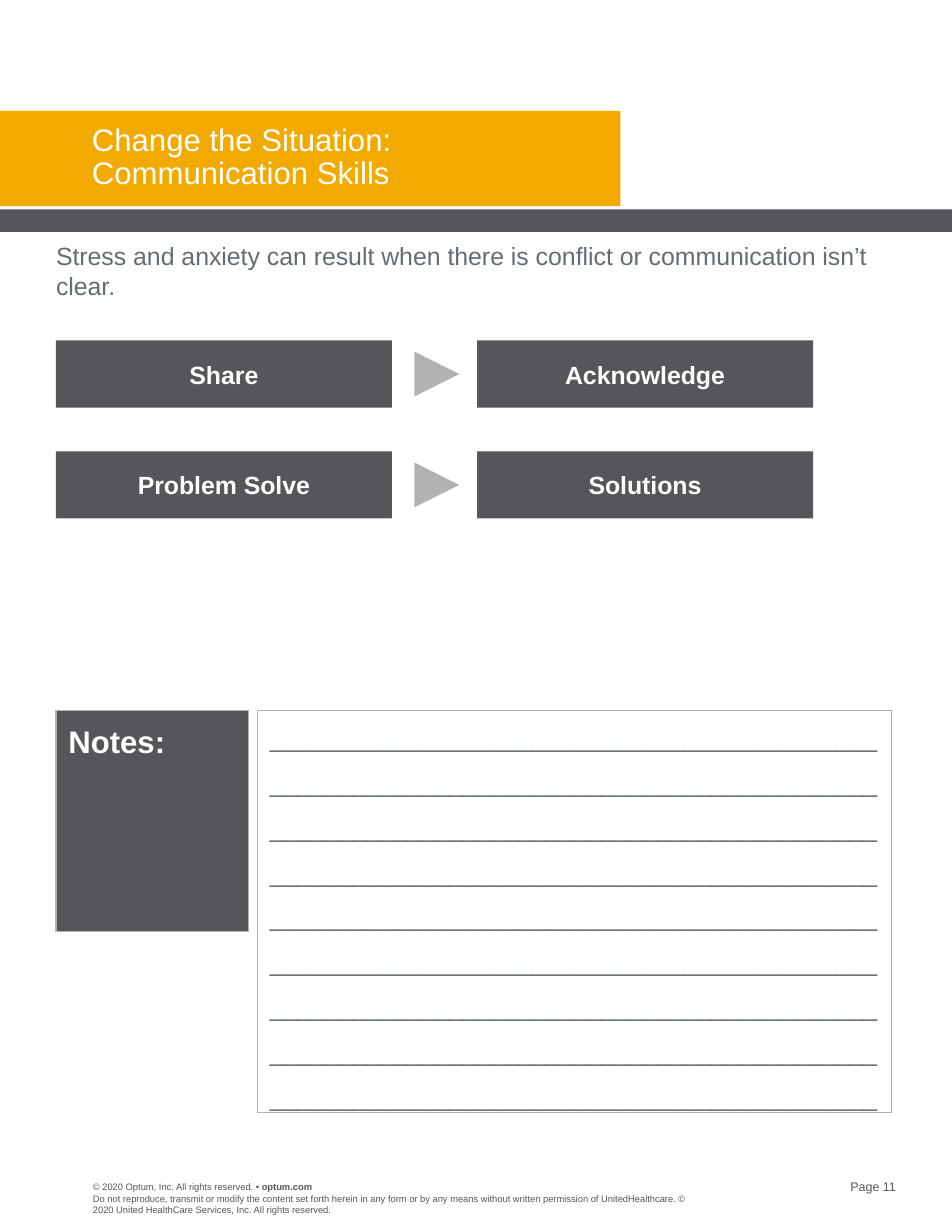
import dataclasses

import pptx
import pptx.dml.color
import pptx.enum.shapes
import pptx.enum.text
import pptx.util

SHAPE = pptx.enum.shapes.MSO_SHAPE
ALIGN = pptx.enum.text.PP_ALIGN
ANCHOR = pptx.enum.text.MSO_ANCHOR


@dataclasses.dataclass(frozen=True)
class Theme:
    font: str = "Arial"
    amber: str = "F2AA00"
    charcoal: str = "55565A"
    slate: str = "646D72"
    silver: str = "B1B3B3"
    white: str = "FFFFFF"
    heading: float = 20
    body: float = 16
    page: float = 8
    legal: float = 6
    hairline: float = 0.75


def rgb(value):
    return pptx.dml.color.RGBColor.from_string(value)


def write(shape, paragraphs, font, size, color, bold=False, align=ALIGN.LEFT,
          anchor=ANCHOR.TOP, inset=0, after=0, line=1.0):
    """Fill a shape; each paragraph is a string or a list of (text, bold) runs."""
    frame = shape.text_frame
    frame.word_wrap = True
    frame.auto_size = pptx.enum.text.MSO_AUTO_SIZE.NONE
    frame.vertical_anchor = anchor
    frame.margin_left = frame.margin_right = pptx.util.Inches(inset)
    frame.margin_top = frame.margin_bottom = pptx.util.Inches(inset)
    for index, content in enumerate(paragraphs):
        paragraph = frame.add_paragraph() if index else frame.paragraphs[0]
        paragraph.alignment = align
        paragraph.line_spacing = line
        paragraph.space_before = pptx.util.Pt(0)
        paragraph.space_after = pptx.util.Pt(after)
        runs = [(content, bold)] if isinstance(content, str) else content
        for text, heavy in runs:
            run = paragraph.add_run()
            run.text = text
            run.font.name = font
            run.font.size = pptx.util.Pt(size)
            run.font.bold = heavy
            run.font.color.rgb = rgb(color)


class Worksheet:
    """Draws on a grid of 85 columns by 110 rows."""

    COLUMNS, ROWS = 85, 110

    def __init__(self, theme):
        self.theme = theme
        self.deck = pptx.Presentation()
        self.deck.slide_width = pptx.util.Inches(8.5)
        self.deck.slide_height = pptx.util.Inches(11)
        self.slide = self.deck.slides.add_slide(self.deck.slide_layouts[5])

    def place(self, column, row, columns, rows):
        across = self.deck.slide_width / self.COLUMNS
        down = self.deck.slide_height / self.ROWS
        return [round(n) for n in
                (column * across, row * down, columns * across, rows * down)]

    def title(self, text, *area):
        heading = self.slide.shapes.title
        heading.left, heading.top, heading.width, heading.height = self.place(*area)
        write(heading, [text], self.theme.font, self.theme.heading,
              self.theme.white, line=0.9)
        # Bring the title in front of the band already drawn.
        heading._element.getparent().append(heading._element)

    def block(self, *area, fill=None, outline=None, kind=SHAPE.RECTANGLE):
        shape = self.slide.shapes.add_shape(kind, *self.place(*area))
        shape.shadow.inherit = False
        if fill:
            shape.fill.solid()
            shape.fill.fore_color.rgb = rgb(fill)
        else:
            shape.fill.background()
        if outline:
            shape.line.color.rgb = rgb(outline)
            shape.line.width = pptx.util.Pt(self.theme.hairline)
        else:
            shape.line.fill.background()
        return shape

    def text(self, paragraphs, *area, size, color, **style):
        box = self.slide.shapes.add_textbox(*self.place(*area))
        write(box, paragraphs, self.theme.font, size, color, **style)

    def step(self, label, column, row):
        box = self.block(column, row, 30, 6, fill=self.theme.charcoal)
        write(box, [label], self.theme.font, self.theme.body, self.theme.white,
              bold=True, align=ALIGN.CENTER, anchor=ANCHOR.MIDDLE, inset=0.06)

    def pointer(self, column, row):
        triangle = self.block(column, row, 4, 4, fill=self.theme.silver,
                              kind=SHAPE.FLOWCHART_EXTRACT)
        triangle.rotation = 90

    def notes(self, row, line_count):
        theme = self.theme
        label = self.block(5, row, 17.2, 19.8, fill=theme.charcoal,
                           outline=theme.silver)
        write(label, ["Notes:"], theme.font, theme.heading, theme.white,
              bold=True, inset=0.11)
        lines = self.block(23, row, 56.6, 35.9, outline=theme.silver)
        write(lines, ["_" * 44] * line_count, theme.font, theme.body,
              theme.slate, inset=0.11, after=9.7)


def main():
    theme = Theme()
    sheet = Worksheet(theme)

    sheet.block(0, 9.9, 55.4, 8.5, fill=theme.amber)
    sheet.block(0, 18.7, 85, 2, fill=theme.charcoal)
    sheet.title("Change the Situation: Communication Skills", 8.2, 11.1, 45, 6.1)
    sheet.text(["Stress and anxiety can result when there is conflict or "
                "communication isn’t clear."],
               5, 21.5, 75.1, 5.4, size=theme.body, color=theme.slate)

    skills = [("Share", "Acknowledge"), ("Problem Solve", "Solutions")]
    for index, (first, second) in enumerate(skills):
        row = 30.4 + 9.9 * index
        sheet.step(first, 5, row)
        sheet.pointer(37, row + 1)
        sheet.step(second, 42.6, row)

    sheet.notes(63.4, line_count=9)

    legal = {"size": theme.legal, "color": theme.charcoal}
    sheet.text([[("© 2020 Optum, Inc. All rights reserved. • ", False),
                 ("optum.com", True)]], 8.3, 105.5, 20, 1, **legal)
    sheet.text(["Do not reproduce, transmit or modify the content set forth "
                "herein in any form or by any means without written permission "
                "of UnitedHealthcare. © 2020 United HealthCare Services, Inc. "
                "All rights reserved."], 8.3, 106.5, 53, 2, **legal)
    sheet.text(["Page 11"], 71.9, 105.3, 8.1, 1.3, size=theme.page,
               color=theme.charcoal, align=ALIGN.RIGHT)

    sheet.deck.save("out.pptx")


if __name__ == "__main__":
    main()
